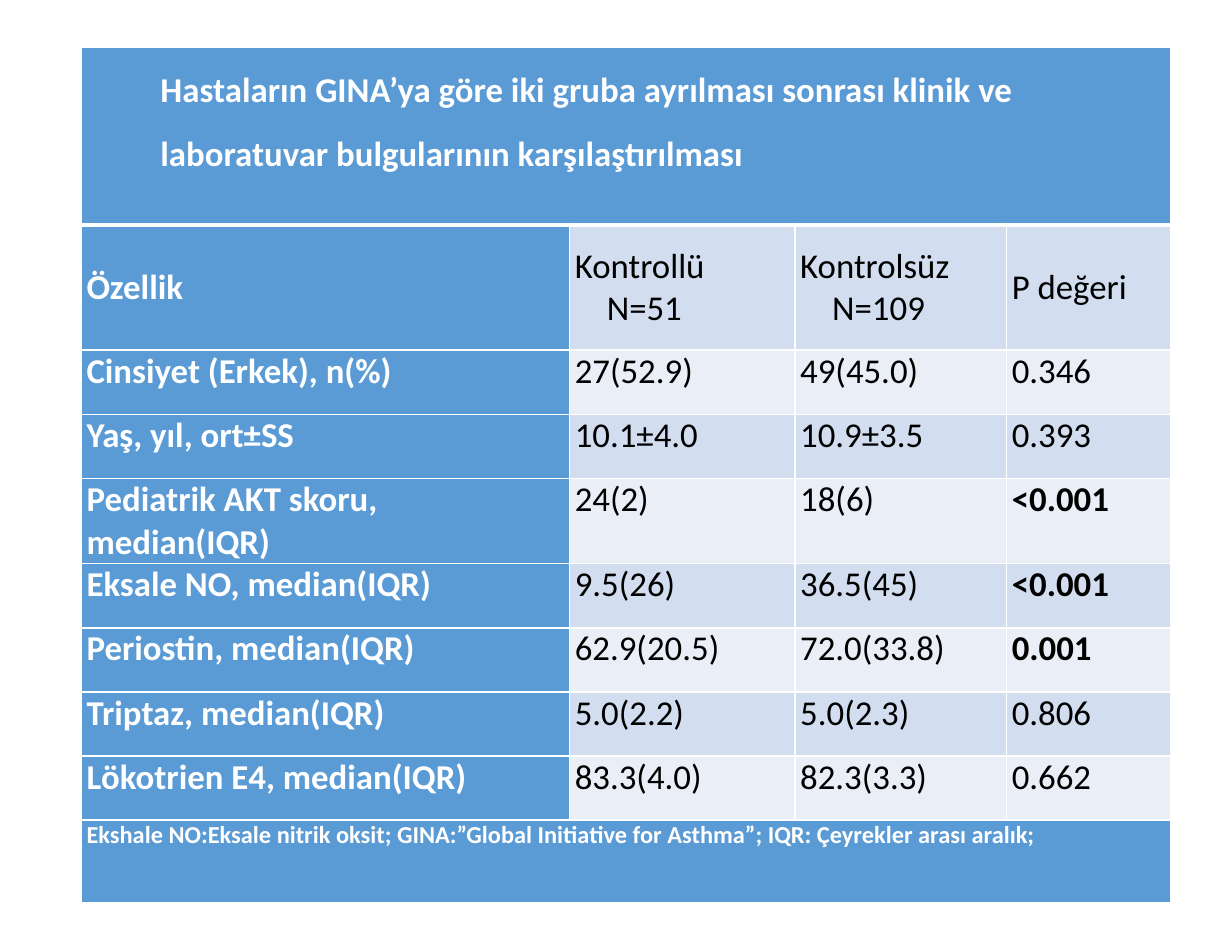
from dataclasses import dataclass

from lxml.etree import SubElement
from pptx import Presentation
from pptx.dml.color import RGBColor
from pptx.enum.text import MSO_ANCHOR as Anchor, PP_ALIGN as Align
from pptx.oxml.ns import qn
from pptx.util import Pt


@dataclass(frozen=True)
class Theme:
    font: str = "Calibri"
    body_size: float = 20
    note_size: float = 14
    accent: str = "5B9BD5"
    band_dark: str = "D2DEEF"
    band_light: str = "EAEFF7"
    light: str = "FFFFFF"
    dark: str = "000000"
    rule: float = 1
    title_rule: float = 3


THEME = Theme()

TITLE = [
    "Hastaların GINA’ya göre iki gruba ayrılması sonrası klinik ve ",
    "laboratuvar bulgularının karşılaştırılması",
]
HEADINGS = ["Özellik", "Kontrollü\nN=51", "Kontrolsüz\nN=109", "P değeri"]
FINDINGS = [
    ("Cinsiyet (Erkek), n(%)", "27(52.9)", "49(45.0)", "0.346"),
    ("Yaş, yıl, ort±SS", "10.1±4.0", "10.9±3.5", "0.393"),
    ("Pediatrik AKT skoru, median(IQR)", "24(2)", "18(6)", "<0.001"),
    ("Eksale NO, median(IQR)", "9.5(26)", "36.5(45)", "<0.001"),
    ("Periostin, median(IQR)", "62.9(20.5)", "72.0(33.8)", "0.001"),
    ("Triptaz, median(IQR)", "5.0(2.2)", "5.0(2.3)", "0.806"),
    ("Lökotrien E4, median(IQR)", "83.3(4.0)", "82.3(3.3)", "0.662"),
]
SIGNIFICANT = {"<0.001", "0.001"}
NOTE = ("Ekshale NO:Eksale nitrik oksit; GINA:”Global Initiative for Asthma”; "
        "IQR: Çeyrekler arası aralık; ")

COLUMN_WIDTHS = [280.8, 129.6, 121.7, 94.3]
TITLE_HEIGHT, HEADING_HEIGHT, NOTE_HEIGHT = 102, 72, 47.5
FINDING_HEIGHT, WRAPPED_HEIGHT = 36.9, 46.8
WRAPPED_FINDING = 2
TITLE_INDENT, COUNT_INDENT = 42.5, 18.4


def draw_borders(cell, top, bottom):
    properties = cell._tc.get_or_add_tcPr()
    widths = {"a:lnL": THEME.rule, "a:lnR": THEME.rule, "a:lnT": top, "a:lnB": bottom}
    for side, width in widths.items():
        line = SubElement(properties, qn(side), w=str(Pt(width)))
        SubElement(SubElement(line, qn("a:solidFill")), qn("a:srgbClr"), val=THEME.light)


def fill_cell(cell, lines, fill, color, bold=False, size=THEME.body_size, anchor=Anchor.TOP):
    """Write the lines as paragraphs and return those paragraphs."""
    cell.fill.solid()
    cell.fill.fore_color.rgb = RGBColor.from_string(fill)
    cell.margin_left = cell.margin_right = Pt(3)
    cell.margin_top = cell.margin_bottom = 0
    cell.vertical_anchor = anchor
    cell.text_frame.text = "\n".join(lines)
    for paragraph in cell.text_frame.paragraphs:
        font = paragraph.font
        font.name, font.size, font.bold = THEME.font, Pt(size), bold
        font.color.rgb = RGBColor.from_string(color)
    return cell.text_frame.paragraphs


def fill_banner(table, row, lines, size):
    """Write justified lines into one cell that spans the whole row."""
    cell = table.cell(row, 0)
    cell.merge(table.cell(row, len(COLUMN_WIDTHS) - 1))
    paragraphs = fill_cell(cell, lines, THEME.accent, THEME.light, True, size)
    for paragraph in paragraphs:
        paragraph.alignment = Align.JUSTIFY
    return paragraphs


def fill_title(table):
    for paragraph in fill_banner(table, 0, TITLE, THEME.body_size):
        paragraph.line_spacing = 1.5
        paragraph._p.get_or_add_pPr().set("indent", str(Pt(TITLE_INDENT)))


def fill_headings(table):
    for column, heading in enumerate(HEADINGS):
        is_label = column == 0
        paragraphs = fill_cell(
            table.cell(1, column), heading.split("\n"),
            THEME.accent if is_label else THEME.band_dark,
            THEME.light if is_label else THEME.dark,
            bold=is_label, anchor=Anchor.MIDDLE)
        for count in paragraphs[1:]:
            count._p.get_or_add_pPr().set("marL", str(Pt(COUNT_INDENT)))


def fill_findings(table):
    for index, (label, *values) in enumerate(FINDINGS):
        row = index + 2
        band = THEME.band_dark if index % 2 else THEME.band_light
        fill_cell(table.cell(row, 0), [label], THEME.accent, THEME.light, True)
        for column, value in enumerate(values, start=1):
            fill_cell(table.cell(row, column), [value], band, THEME.dark,
                      bold=value in SIGNIFICANT)


def add_comparison(slide):
    heights = [TITLE_HEIGHT, HEADING_HEIGHT, *[FINDING_HEIGHT] * len(FINDINGS), NOTE_HEIGHT]
    heights[2 + WRAPPED_FINDING] = WRAPPED_HEIGHT
    table = slide.shapes.add_table(
        len(heights), len(COLUMN_WIDTHS), Pt(46.8), Pt(27.4),
        Pt(sum(COLUMN_WIDTHS)), Pt(sum(heights))).table
    table.first_row = table.horz_banding = False
    for column, width in zip(table.columns, COLUMN_WIDTHS):
        column.width = Pt(width)
    for index, (row, height) in enumerate(zip(table.rows, heights)):
        row.height = Pt(height)
        for cell in row.cells:
            draw_borders(cell,
                         top=THEME.title_rule if index == 1 else THEME.rule,
                         bottom=THEME.title_rule if index == 0 else THEME.rule)
    fill_title(table)
    fill_headings(table)
    fill_findings(table)
    fill_banner(table, len(heights) - 1, [NOTE], THEME.note_size)


def main():
    deck = Presentation()
    deck.slide_width, deck.slide_height = Pt(708.5), Pt(540)
    add_comparison(deck.slides.add_slide(deck.slide_layouts[6]))
    deck.save("out.pptx")


if __name__ == "__main__":
    main()
